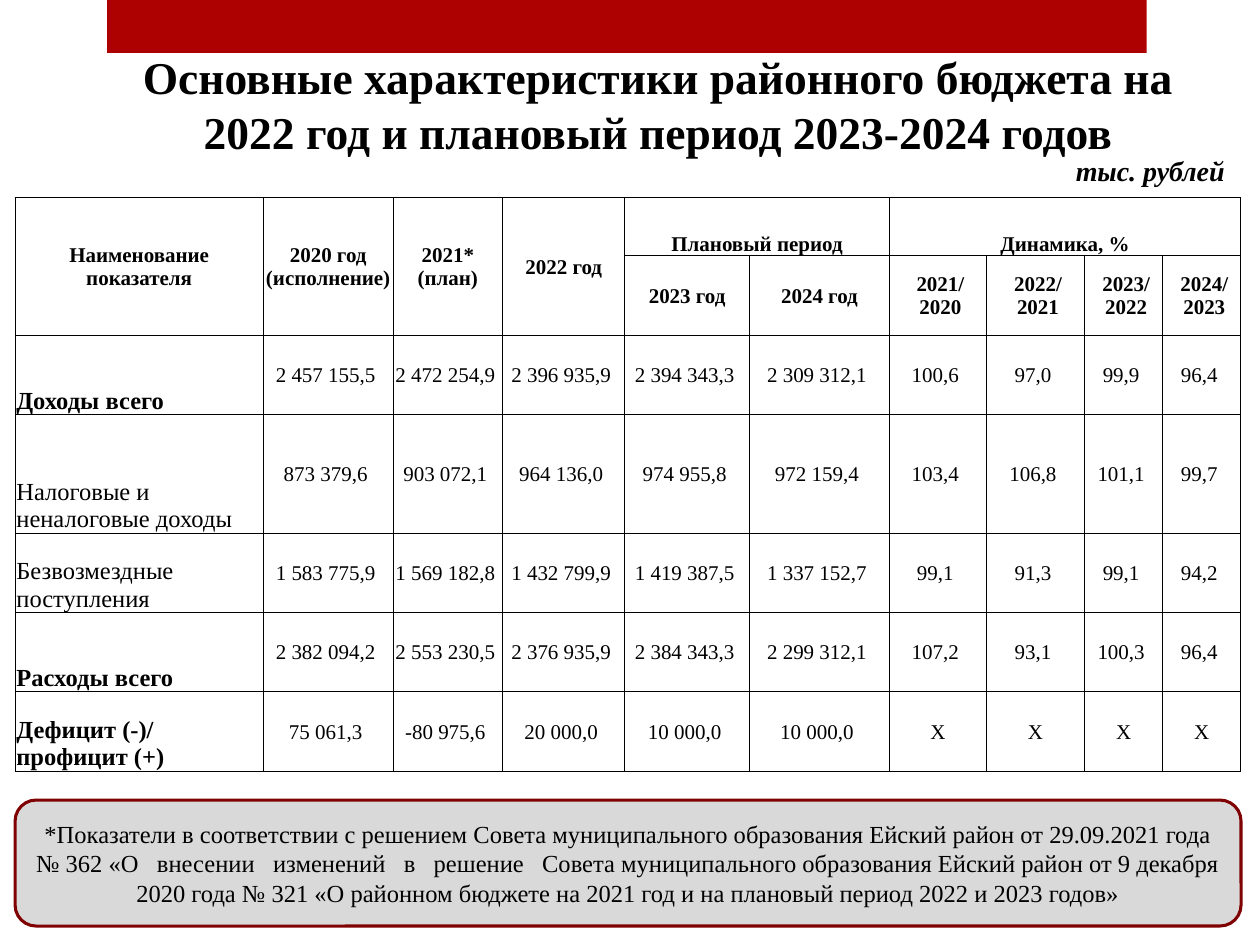
from itertools import accumulate

from lxml import etree
from pptx import Presentation
from pptx.dml.color import RGBColor
from pptx.enum.shapes import MSO_SHAPE
from pptx.enum.text import MSO_ANCHOR, PP_ALIGN
from pptx.oxml.ns import qn
from pptx.util import Inches, Pt

RECT, ROUNDED = MSO_SHAPE.RECTANGLE, MSO_SHAPE.ROUNDED_RECTANGLE
LEFT, CENTER = PP_ALIGN.LEFT, PP_ALIGN.CENTER
MIDDLE, BOTTOM = MSO_ANCHOR.MIDDLE, MSO_ANCHOR.BOTTOM
FONT = "Times New Roman"
COLORS = {"band": "AD0101", "note": "D9D9D9", "note_line": "800101", "text": "000000"}

COLUMN_WIDTHS = [1.97, 1.03, 0.87, 0.97, 0.99, 1.11, 0.77, 0.78, 0.62, 0.62]
ROW_HEIGHTS = [0.46, 0.63, 0.63, 0.94, 0.63, 0.63, 0.63]
TALL_HEADERS = ["Наименование показателя", "2020 год (исполнение)", "2021* (план)", "2022 год"]
GROUP_HEADERS = [
    ("Плановый период", 4, ["2023 год", "2024 год"]),
    ("Динамика, %", 6, ["2021/ 2020", "2022/ 2021", "2023/ 2022", "2024/ 2023"]),
]
INDICATORS = [
    ("Доходы всего", True, ["2 457 155,5", "2 472 254,9", "2 396 935,9", "2 394 343,3",
                            "2 309 312,1", "100,6", "97,0", "99,9", "96,4"]),
    ("Налоговые и неналоговые доходы", False,
     ["873 379,6", "903 072,1", "964 136,0", "974 955,8",
      "972 159,4", "103,4", "106,8", "101,1", "99,7"]),
    ("Безвозмездные поступления", False,
     ["1 583 775,9", "1 569 182,8", "1 432 799,9", "1 419 387,5",
      "1 337 152,7", "99,1", "91,3", "99,1", "94,2"]),
    ("Расходы всего", True, ["2 382 094,2", "2 553 230,5", "2 376 935,9", "2 384 343,3",
                             "2 299 312,1", "107,2", "93,1", "100,3", "96,4"]),
    ("Дефицит (-)/ профицит (+)", True, ["75 061,3", "-80 975,6", "20 000,0", "10 000,0",
                                         "10 000,0", "Х", "Х", "Х", "Х"]),
]
TITLE = ["Основные характеристики районного бюджета на",
         "2022 год и плановый период 2023-2024 годов"]
NOTE = ("*Показатели в соответствии с решением Совета муниципального образования "
        "Ейский район от 29.09.2021 года № 362 «О   внесении   изменений   в   решение   "
        "Совета муниципального образования Ейский район от 9 декабря 2020 года № 321 "
        "«О районном бюджете на 2021 год и на плановый период 2022 и 2023 годов»")


def color(name):
    """Return the named colour."""
    return RGBColor.from_string(COLORS[name])


def write(paragraph, text, size, bold=False, italic=False, align=LEFT):
    """Add one styled run to a paragraph."""
    paragraph.alignment = align
    run = paragraph.add_run()
    run.text = text
    font = run.font
    font.name, font.size, font.bold, font.italic = FONT, Pt(size), bold, italic
    font.color.rgb = color("text")


def add_panel(slide, kind, box, fill, line=None):
    """Add a filled shape with an optional outline."""
    panel = slide.shapes.add_shape(kind, *map(Inches, box))
    panel.shadow.inherit = False
    panel.fill.solid()
    panel.fill.fore_color.rgb = color(fill)
    if line:
        panel.line.color.rgb = color(line)
        panel.line.width = Pt(1.75)
    else:
        panel.line.fill.background()
    return panel


def add_heading(slide, box, lines, size, italic=False, align=CENTER, wrap=True):
    """Add a bold text box with one paragraph per line."""
    frame = slide.shapes.add_textbox(*map(Inches, box)).text_frame
    frame.word_wrap = wrap
    for index, line in enumerate(lines):
        paragraph = frame.add_paragraph() if index else frame.paragraphs[0]
        write(paragraph, line, size, True, italic, align)


def add_note(slide, box):
    """Add the rounded footnote panel."""
    frame = add_panel(slide, ROUNDED, box, "note", "note_line").text_frame
    frame.word_wrap = True
    frame.vertical_anchor = MIDDLE
    write(frame.paragraphs[0], NOTE, 14, align=CENTER)


def style_cell(cell):
    """Clear the fill, tighten the insets and draw thin borders."""
    cell.margin_left = cell.margin_right = cell.margin_top = Inches(0.01)
    cell.margin_bottom = 0
    properties = cell._tc.get_or_add_tcPr()
    for side in ("a:lnL", "a:lnR", "a:lnT", "a:lnB"):
        border = etree.SubElement(properties, qn(side), w=str(Pt(0.5)))
        fill = etree.SubElement(border, qn("a:solidFill"))
        etree.SubElement(fill, qn("a:srgbClr"), val=COLORS["text"])
    cell.fill.background()


def fill_cell(cell, text, size=12, bold=False, align=CENTER, anchor=MIDDLE):
    """Write one table cell."""
    cell.vertical_anchor = anchor
    write(cell.text_frame.paragraphs[0], text, size, bold, align=align)


def fill_header(table):
    """Merge and write the two header rows."""
    for column, text in enumerate(TALL_HEADERS):
        table.cell(0, column).merge(table.cell(1, column))
        fill_cell(table.cell(0, column), text, bold=True)
    for group, first, years in GROUP_HEADERS:
        table.cell(0, first).merge(table.cell(0, first + len(years) - 1))
        fill_cell(table.cell(0, first), group, bold=True, anchor=BOTTOM)
        for column, year in enumerate(years, first):
            cell = table.cell(1, column)
            if "/" in year:
                cell.margin_left = Inches(0.05)
            fill_cell(cell, year, bold=True)


def fill_indicators(table):
    """Write the budget indicators below the header."""
    for row, (label, bold, values) in enumerate(INDICATORS, 2):
        fill_cell(table.cell(row, 0), label, 14, bold, LEFT, BOTTOM)
        for column, value in enumerate(values, 1):
            cell = table.cell(row, column)
            if "," in value:
                cell.margin_right = Inches(0.05)
            fill_cell(cell, value)


def add_budget_table(slide, left, top):
    """Add the budget table at the given corner."""
    *_, width = accumulate(COLUMN_WIDTHS)
    *_, height = accumulate(ROW_HEIGHTS)
    table = slide.shapes.add_table(len(ROW_HEIGHTS), len(COLUMN_WIDTHS),
                                   *map(Inches, (left, top, width, height))).table
    table.first_row = table.horz_banding = False
    for column, column_width in zip(table.columns, COLUMN_WIDTHS):
        column.width = Inches(column_width)
    for row, row_height in zip(table.rows, ROW_HEIGHTS):
        row.height = Inches(row_height)
        for cell in row.cells:
            style_cell(cell)
    fill_header(table)
    fill_indicators(table)


def main():
    """Build and save the budget slide."""
    deck = Presentation()
    deck.slide_width, deck.slide_height = Inches(10), Inches(7.5)
    slide = deck.slides.add_slide(deck.slide_layouts[6])
    add_panel(slide, RECT, (0.85, 0, 8.25, 0.42), "band")
    add_heading(slide, (0.44, 0.34, 9.57, 0.98), TITLE, 26)
    add_heading(slide, (8.44, 1.17, 1.4, 0.37), ["тыс. рублей"], 16, True, LEFT, False)
    add_note(slide, (0.12, 6.35, 9.73, 1))
    add_budget_table(slide, 0.12, 1.57)
    deck.save("out.pptx")


if __name__ == "__main__":
    main()
